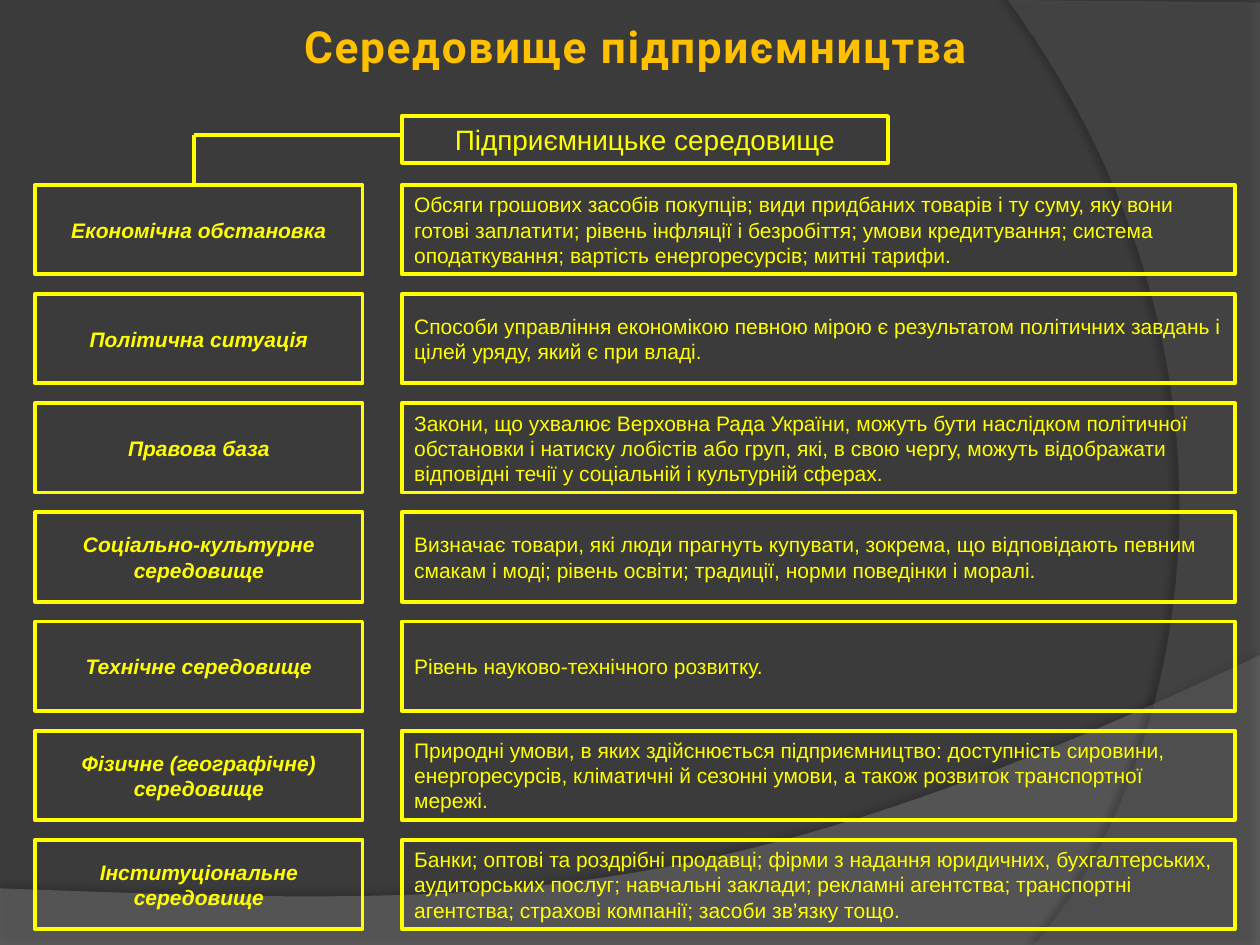
from lxml import etree
from pptx import Presentation
from pptx.dml.color import RGBColor
from pptx.enum.shapes import MSO_CONNECTOR, MSO_SHAPE
from pptx.enum.text import MSO_ANCHOR, MSO_AUTO_SIZE, PP_ALIGN
from pptx.oxml.ns import qn
from pptx.util import Cm, Pt

RECTANGLE = MSO_SHAPE.RECTANGLE
STRAIGHT = MSO_CONNECTOR.STRAIGHT
TOP, MIDDLE = MSO_ANCHOR.TOP, MSO_ANCHOR.MIDDLE
LEFT, CENTER = PP_ALIGN.LEFT, PP_ALIGN.CENTER
FIT_SHAPE = MSO_AUTO_SIZE.SHAPE_TO_FIT_TEXT

COLORS = {
    "background": "3B3B3B",
    "wave": "7F7F7F",
    "arc": "5E5E5E",
    "shadow": "000000",
    "title": "FFC000",
    "yellow": "FFFF00",
}

# Grid in centimetres
LABEL_LEFT, LABEL_WIDTH = 0.71, 6.6
TEXT_LEFT, TEXT_WIDTH = 8.1, 16.79
ROW_TOP, ROW_STEP, ROW_HEIGHT = 3.73, 2.2, 1.8
BRANCH_X, BRANCH_Y = 3.91, 2.72

ROWS = [
    ("Економічна обстановка",
     "Обсяги грошових засобів покупців; види придбаних товарів і ту суму, яку вони "
     "готові заплатити; рівень інфляції і безробіття; умови кредитування; система "
     "оподаткування; вартість енергоресурсів; митні тарифи."),
    ("Політична ситуація",
     "Способи управління економікою певною мірою є результатом політичних завдань і "
     "цілей уряду, який є при владі."),
    ("Правова база",
     "Закони, що ухвалює Верховна Рада України, можуть бути наслідком політичної "
     "обстановки і натиску лобістів або груп, які, в свою чергу, можуть відображати "
     "відповідні течії у соціальній і культурній сферах."),
    ("Соціально-культурне середовище",
     "Визначає товари, які люди прагнуть купувати, зокрема, що відповідають певним "
     "смакам і моді; рівень освіти; традиції, норми поведінки і моралі."),
    ("Технічне середовище",
     "Рівень науково-технічного розвитку."),
    ("Фізичне (географічне) середовище",
     "Природні умови, в яких здійснюється підприємництво: доступність сировини, "
     "енергоресурсів, кліматичні й сезонні умови, а також розвиток транспортної мережі."),
    ("Інституціональне середовище",
     "Банки; оптові та роздрібні продавці; фірми з надання юридичних, бухгалтерських, "
     "аудиторських послуг; навчальні заклади; рекламні агентства; транспортні "
     "агентства; страхові компанії; засоби зв’язку тощо."),
]


def color(name):
    return RGBColor.from_string(COLORS[name])


def write_text(shape, text, *, size=12, font="Arial", tint="yellow", bold=False,
               italic=False, align=LEFT, anchor=MIDDLE, inset=(0.1, 0.1), spacing=None):
    frame = shape.text_frame
    frame.word_wrap = True
    frame.vertical_anchor = anchor
    frame.margin_left = frame.margin_right = Cm(inset[0])
    frame.margin_top = frame.margin_bottom = Cm(inset[1])
    para = frame.paragraphs[0]
    para.alignment = align
    span = para.add_run()
    span.text = text
    span.font.name = font
    span.font.size = Pt(size)
    span.font.bold = bold
    span.font.italic = italic
    span.font.color.rgb = color(tint)
    if spacing:
        span.font._element.set("spc", str(spacing * 100))


def curve_points(start, first, second, end, steps=60):
    """Points along a cubic Bezier curve, start left out."""
    points = []
    for step in range(1, steps + 1):
        t = step / steps
        weights = ((1 - t) ** 3, 3 * t * (1 - t) ** 2, 3 * t * t * (1 - t), t ** 3)
        points.append(tuple(
            sum(weight * value for weight, value in zip(weights, axis))
            for axis in zip(start, first, second, end)))
    return points


class SlideBuilder:
    def __init__(self, page, line_width=2.25):
        self.page = page
        self.line_width = Pt(line_width)

    def background(self, tint):
        fill = self.page.background.fill
        fill.solid()
        fill.fore_color.rgb = color(tint)

    def swoosh(self, corners, curve, tint, opacity, shadow_opacity, distance, angle):
        points = [(Cm(x), Cm(y)) for x, y in corners + curve_points(corners[-1], *curve)]
        builder = self.page.shapes.build_freeform(*points[0])
        builder.add_line_segments(points[1:], close=True)
        shape = builder.convert_to_shape()
        shape.fill.solid()
        shape.fill.fore_color.rgb = color(tint)
        shape.line.fill.background()
        shape.shadow.inherit = False
        properties = shape._element.spPr
        fill_color = properties.find(qn("a:solidFill"))[0]
        etree.SubElement(fill_color, qn("a:alpha"), val=str(opacity * 1000))
        # Soft outer shadow
        shadow = etree.SubElement(
            properties.find(qn("a:effectLst")), qn("a:outerShdw"), blurRad=str(Pt(4)),
            dist=str(Pt(distance)), dir=str(angle * 60000), algn="ctr", rotWithShape="0")
        shade = etree.SubElement(shadow, qn("a:srgbClr"), val=COLORS["shadow"])
        etree.SubElement(shade, qn("a:alpha"), val=str(shadow_opacity * 1000))

    def title(self, text, left, top, width, height):
        box = self.page.shapes.add_textbox(Cm(left), Cm(top), Cm(width), Cm(height))
        write_text(box, text, size=25.2, font="Roboto", tint="title", bold=True,
                   align=CENTER, inset=(0.13, 0.13), spacing=1)

    def frame(self, text, left, top, width, height, **style):
        box = self.page.shapes.add_shape(
            RECTANGLE, Cm(left), Cm(top), Cm(width), Cm(height))
        box.shadow.inherit = False
        box.fill.background()
        box.line.color.rgb = color("yellow")
        box.line.width = self.line_width
        write_text(box, text, **style)
        return box

    def line(self, x1, y1, x2, y2):
        link = self.page.shapes.add_connector(STRAIGHT, Cm(x1), Cm(y1), Cm(x2), Cm(y2))
        link.line.color.rgb = color("yellow")
        link.line.width = self.line_width
        etree.SubElement(link._element.spPr, qn("a:effectLst"))


def main():
    deck = Presentation()
    deck.slide_width, deck.slide_height = Cm(25.4), Cm(19.05)
    slide = SlideBuilder(deck.slides.add_slide(deck.slide_layouts[6]))

    # Backdrop
    slide.background("background")
    slide.swoosh([(0, 17.91), (0, 19.08), (25.4, 19.08), (25.4, 13.21)],
                 [(14.2, 18.52), (9.93, 18.26), (0, 17.91)],
                 "wave", 45, 35, 3.5, 270)
    slide.swoosh([(25.4, 0.05), (25.4, 19.05), (20.85, 19.05)],
                 [(23.75, 15.72), (25.86, 7.62), (20.32, 0)],
                 "arc", 40, 45, 4, 180)

    # Title and heading box
    slide.title("Середовище підприємництва", 0.71, 0.33, 24.21, 1.19)
    heading = slide.frame("Підприємницьке середовище", TEXT_LEFT, 2.34, 9.8, 0.94,
                          size=16, align=CENTER, anchor=TOP, inset=(0.25, 0.13))
    heading.text_frame.auto_size = FIT_SHAPE

    # Factors and their descriptions
    for index, (label, description) in enumerate(ROWS):
        top = ROW_TOP + index * ROW_STEP
        slide.frame(label, LABEL_LEFT, top, LABEL_WIDTH, ROW_HEIGHT,
                    bold=True, italic=True, align=CENTER)
        slide.frame(description, TEXT_LEFT, top, TEXT_WIDTH, ROW_HEIGHT,
                    inset=(0.25, 0.1))

    # Branch from the heading to the first factor
    slide.line(BRANCH_X, BRANCH_Y, TEXT_LEFT, BRANCH_Y)
    slide.line(BRANCH_X, BRANCH_Y, BRANCH_X, ROW_TOP)

    deck.save("out.pptx")


if __name__ == "__main__":
    main()
